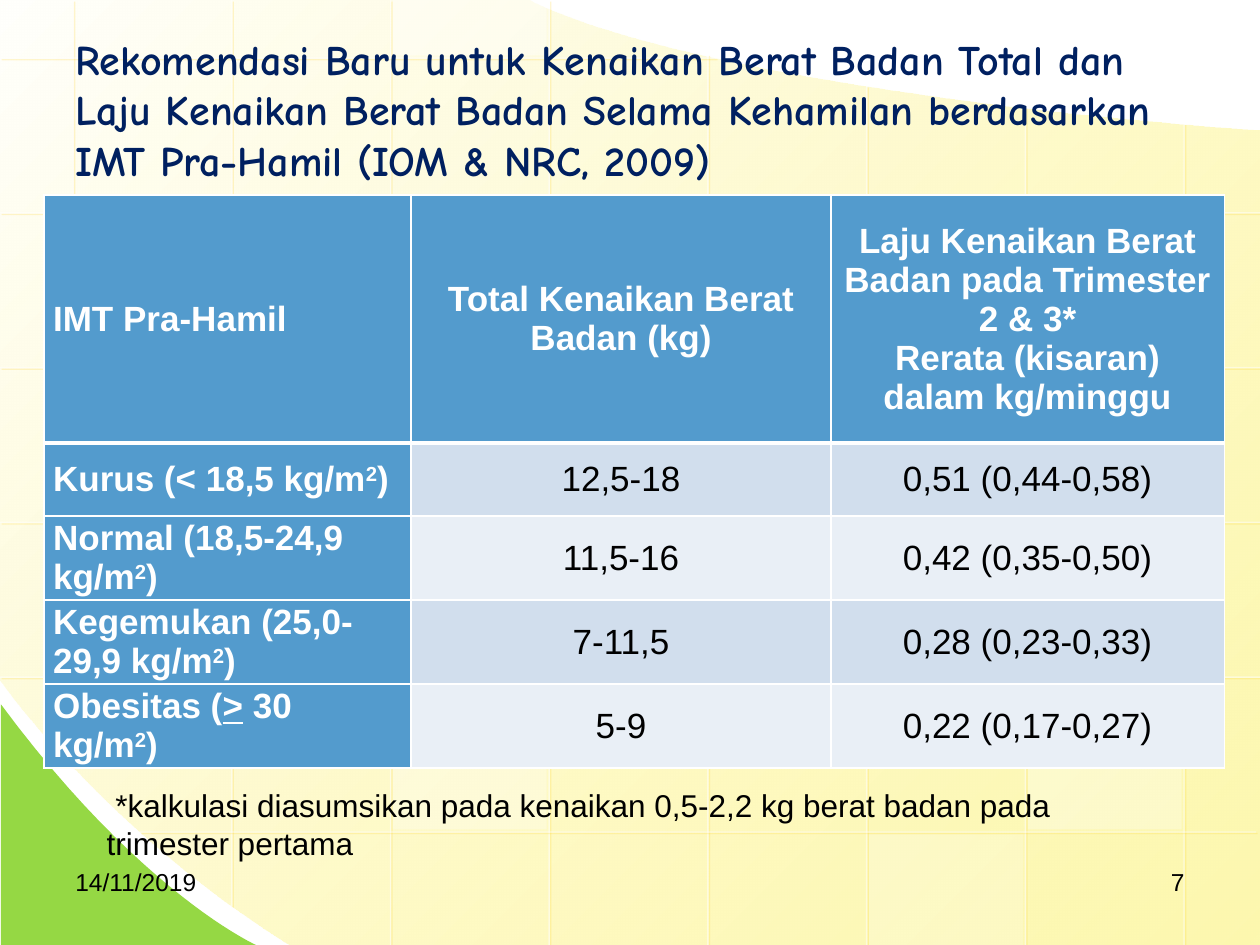
from lxml import etree
from pptx import Presentation
from pptx.dml.color import RGBColor
from pptx.enum.shapes import MSO_CONNECTOR, MSO_SHAPE
from pptx.enum.text import MSO_ANCHOR, PP_ALIGN
from pptx.oxml import parse_xml
from pptx.oxml.ns import nsdecls, qn
from pptx.util import Cm, Pt

LEFT, CENTER, RIGHT = PP_ALIGN.LEFT, PP_ALIGN.CENTER, PP_ALIGN.RIGHT
TOP, MIDDLE = MSO_ANCHOR.TOP, MSO_ANCHOR.MIDDLE
STRAIGHT = MSO_CONNECTOR.STRAIGHT
RECTANGLE = MSO_SHAPE.RECTANGLE

WHITE = RGBColor(0xFF, 0xFF, 0xFF)
BLACK = RGBColor(0x00, 0x00, 0x00)
NAVY = RGBColor(0x00, 0x20, 0x60)
CREAM = RGBColor(0xFF, 0xFF, 0xFC)
YELLOW = RGBColor(0xFD, 0xF5, 0x8D)
GOLD = RGBColor(0xFF, 0xCC, 0x00)
GREEN = RGBColor(0x95, 0xD8, 0x44)
BLUE = RGBColor(0x53, 0x9B, 0xCD)
BAND_DARK = RGBColor(0xD1, 0xDE, 0xED)
BAND_LIGHT = RGBColor(0xE9, 0xEF, 0xF6)

WIDTH, HEIGHT = 25.4, 19.05
GRID_X, STEP_X = 1.47, 3.2
GRID_Y, STEP_Y = 1.17, 3.12
PANEL_GAP = 0.05

COLUMN_SPANS = [(0, 15.47), (0, 18.26), (0, 19.05), (0, 19.1),
                (1.09, 19.1), (1.73, 19.1), (2.16, 19.1), (2.49, 19.1)]
ROW_SPANS = [(0, 14.43)] + [(0, 25.43)] * 4 + [(2.82, 25.32)]
PANELS = [(3, 2, 25), (6, 4, 30), (0, 3, 20), (5, 5, 20),
          (2, -1, 40), (2, 4, 30), (5, 1, 30)]

BACKDROP = [(25.4, 2.64), [(25.4, 10.85), (25.4, 19.05), (25.4, 19.05)],
            [(25.4, 19.05), (15.62, 19.05), (5.84, 19.05)],
            [(2.18, 16.79), (-0.02, 13.69), (0, 13.69)],
            (-0.02, -0.02), (10.67, 0),
            [(10.67, 0.02), (13.61, 1.75), (25.4, 2.64)]]
HILL = [(0.02, 14.2), (0.02, 19.05), (5.16, 19.05),
        [(5.16, 19.05), (2.84, 18.01), (0.02, 14.2)]]

TITLE = ("Rekomendasi Baru untuk Kenaikan Berat Badan Total dan Laju Kenaikan "
         "Berat Badan Selama Kehamilan berdasarkan IMT Pra-Hamil (IOM & NRC, 2009)")
FOOTNOTE = (" *kalkulasi diasumsikan pada kenaikan 0,5-2,2 kg berat badan pada "
            "trimester pertama")
SQUARE_METRE = [("2", {"baseline": 30000}), ")"]
HEADERS = [["IMT Pra-Hamil"], ["Total Kenaikan Berat Badan (kg)"],
           ["Laju Kenaikan Berat Badan pada Trimester 2 & 3*",
            "Rerata (kisaran) dalam kg/minggu"]]
GAINS = [
    (["Kurus (< 18,5 kg/m"], "12,5-18", "0,51 (0,44-0,58)"),
    (["Normal (18,5-24,9 kg/m"], "11,5-16", "0,42 (0,35-0,50)"),
    (["Kegemukan (25,0-29,9 kg/m"], "7-11,5", "0,28 (0,23-0,33)"),
    (["Obesitas (", (">", {"underline": True}), " 30 kg/m"], "5-9", "0,22 (0,17-0,27)"),
]
COLUMN_WIDTHS = [7.4, 8.46, 7.93]
ROW_HEIGHTS = [5.0] + [1.47] * 4


def set_alpha(element, percent):
    color = list(element.iter(qn("a:srgbClr")))[-1]
    etree.SubElement(color, qn("a:alpha")).set("val", str(percent * 1000))


def shadow_effect(color, percent):
    return parse_xml(
        f'<a:effectLst {nsdecls("a")}><a:outerShdw blurRad="0" dist="17780" dir="2700000">'
        f'<a:srgbClr val="{color}"><a:alpha val="{percent * 1000}"/></a:srgbClr>'
        f'</a:outerShdw></a:effectLst>')


def write_text(frame, paragraphs, size=20, font="Arial", color=BLACK, bold=False,
               align=LEFT, halo=False):
    frame.word_wrap = True
    for index, runs in enumerate(paragraphs):
        paragraph = frame.paragraphs[0] if index == 0 else frame.add_paragraph()
        paragraph.alignment = align
        for part in [runs] if isinstance(runs, str) else runs:
            words, extra = (part, {}) if isinstance(part, str) else part
            run = paragraph.add_run()
            run.text = words
            run.font.size, run.font.name, run.font.bold = Pt(size), font, bold
            run.font.color.rgb = color
            run.font.underline = extra.get("underline")
            properties = run.font._element
            if "baseline" in extra:
                properties.set("baseline", str(extra["baseline"]))
            if halo:
                properties.find(qn("a:solidFill")).addnext(shadow_effect(WHITE, 100))


def add_label(slide, left, top, width, height, words, anchor=TOP, **style):
    frame = slide.shapes.add_textbox(Cm(left), Cm(top), Cm(width), Cm(height)).text_frame
    frame.vertical_anchor = anchor
    write_text(frame, [words], **style)


def trace(outline, steps=24):
    points = [outline[0]]
    for segment in outline[1:]:
        if isinstance(segment, tuple):
            points.append(segment)
            continue
        start, (first, second, end) = points[-1], segment
        for step in range(1, steps + 1):
            t = step / steps
            u = 1 - t
            points.append(tuple(
                u**3 * a + 3 * u * u * t * b + 3 * u * t * t * c + t**3 * d
                for a, b, c, d in zip(start, first, second, end)))
    return [(Cm(x), Cm(y)) for x, y in points]


def add_outline(slide, outline):
    points = trace(outline)
    builder = slide.shapes.build_freeform(*points[0])
    builder.add_line_segments(points[1:], close=True)
    shape = builder.convert_to_shape()
    shape.shadow.inherit = False
    shape.line.fill.background()
    return shape


def add_backdrop(slide):
    fill = add_outline(slide, BACKDROP).fill
    fill.gradient()
    fill.gradient_angle = 315
    for stop, color, position in zip(fill.gradient_stops, (CREAM, YELLOW), (0, 1)):
        stop.color.rgb = color
        stop.position = position
    set_alpha(slide.shapes[-1]._element.spPr, 70)
    hill = add_outline(slide, HILL)
    hill.fill.solid()
    hill.fill.fore_color.rgb = GREEN


def add_grid_line(slide, x1, y1, x2, y2):
    line = slide.shapes.add_connector(STRAIGHT, Cm(x1), Cm(y1), Cm(x2), Cm(y2))
    line.line.width = Pt(0.75)
    line.line.color.rgb = WHITE
    properties = line._element.spPr
    set_alpha(properties, 50)
    properties.append(shadow_effect(GOLD, 35))


def add_panel(slide, column, row, opacity):
    left = GRID_X + column * STEP_X + PANEL_GAP
    top = max(0, GRID_Y + row * STEP_Y + PANEL_GAP)
    bottom = min(HEIGHT, GRID_Y + (row + 1) * STEP_Y - PANEL_GAP)
    panel = slide.shapes.add_shape(RECTANGLE, Cm(left), Cm(top), Cm(STEP_X - 2 * PANEL_GAP),
                                   Cm(bottom - top))
    panel.shadow.inherit = False
    panel.line.fill.background()
    panel.fill.solid()
    panel.fill.fore_color.rgb = WHITE
    set_alpha(panel._element.spPr, opacity)


def fill_cell(cell, paragraphs, fill, top_border=1, bottom_border=1, **style):
    cell.margin_left = cell.margin_right = Cm(0.18)
    cell.margin_top = cell.margin_bottom = Cm(0)
    cell.vertical_anchor = MIDDLE
    for side, width in zip("LRTB", (1, 1, top_border, bottom_border)):
        cell._tc.get_or_add_tcPr().append(parse_xml(
            f'<a:ln{side} {nsdecls("a")} w="{Pt(width)}"><a:solidFill>'
            f'<a:srgbClr val="{WHITE}"/></a:solidFill></a:ln{side}>'))
    cell.fill.solid()
    cell.fill.fore_color.rgb = fill
    write_text(cell.text_frame, paragraphs, **style)


def add_gain_table(slide):
    table = slide.shapes.add_table(
        len(ROW_HEIGHTS), len(COLUMN_WIDTHS), Cm(0.89), Cm(3.93),
        Cm(sum(COLUMN_WIDTHS)), Cm(sum(ROW_HEIGHTS))).table
    for column, width in zip(table.columns, COLUMN_WIDTHS):
        column.width = Cm(width)
    for row, height in zip(table.rows, ROW_HEIGHTS):
        row.height = Cm(height)
    for column, header in enumerate(HEADERS):
        fill_cell(table.cell(0, column), header, BLUE, bottom_border=3, color=WHITE,
                  bold=True, align=CENTER if column else LEFT)
    for row, (category, *values) in enumerate(GAINS, 1):
        top_border = 3 if row == 1 else 1
        fill_cell(table.cell(row, 0), [category + SQUARE_METRE], BLUE, top_border,
                  color=WHITE, bold=True)
        band = BAND_DARK if row % 2 else BAND_LIGHT
        for column, value in enumerate(values, 1):
            fill_cell(table.cell(row, column), [value], band, top_border, align=CENTER)


def main():
    deck = Presentation()
    deck.slide_width, deck.slide_height = Cm(WIDTH), Cm(HEIGHT)
    slide = deck.slides.add_slide(deck.slide_layouts[6])
    add_backdrop(slide)
    for index, (top, bottom) in enumerate(COLUMN_SPANS):
        x = GRID_X + index * STEP_X
        add_grid_line(slide, x, top, x, bottom)
    for index, (left, right) in enumerate(ROW_SPANS):
        y = GRID_Y + index * STEP_Y
        add_grid_line(slide, right, y, left, y)
    for panel in PANELS:
        add_panel(slide, *panel)
    add_label(slide, 1.27, 0.91, 22.86, 2.57, TITLE, anchor=MIDDLE, size=24,
              font="Comic Neue", color=NAVY, bold=True, halo=True)
    add_label(slide, 1.27, 17.35, 5.92, 1.32, "14/11/2019", size=14)
    add_label(slide, 18.21, 17.35, 5.92, 1.32, "7", size=14, align=RIGHT)
    add_gain_table(slide)
    add_label(slide, 1.9, 15.72, 21, 1.8, FOOTNOTE, size=18)
    deck.save("out.pptx")


if __name__ == "__main__":
    main()
